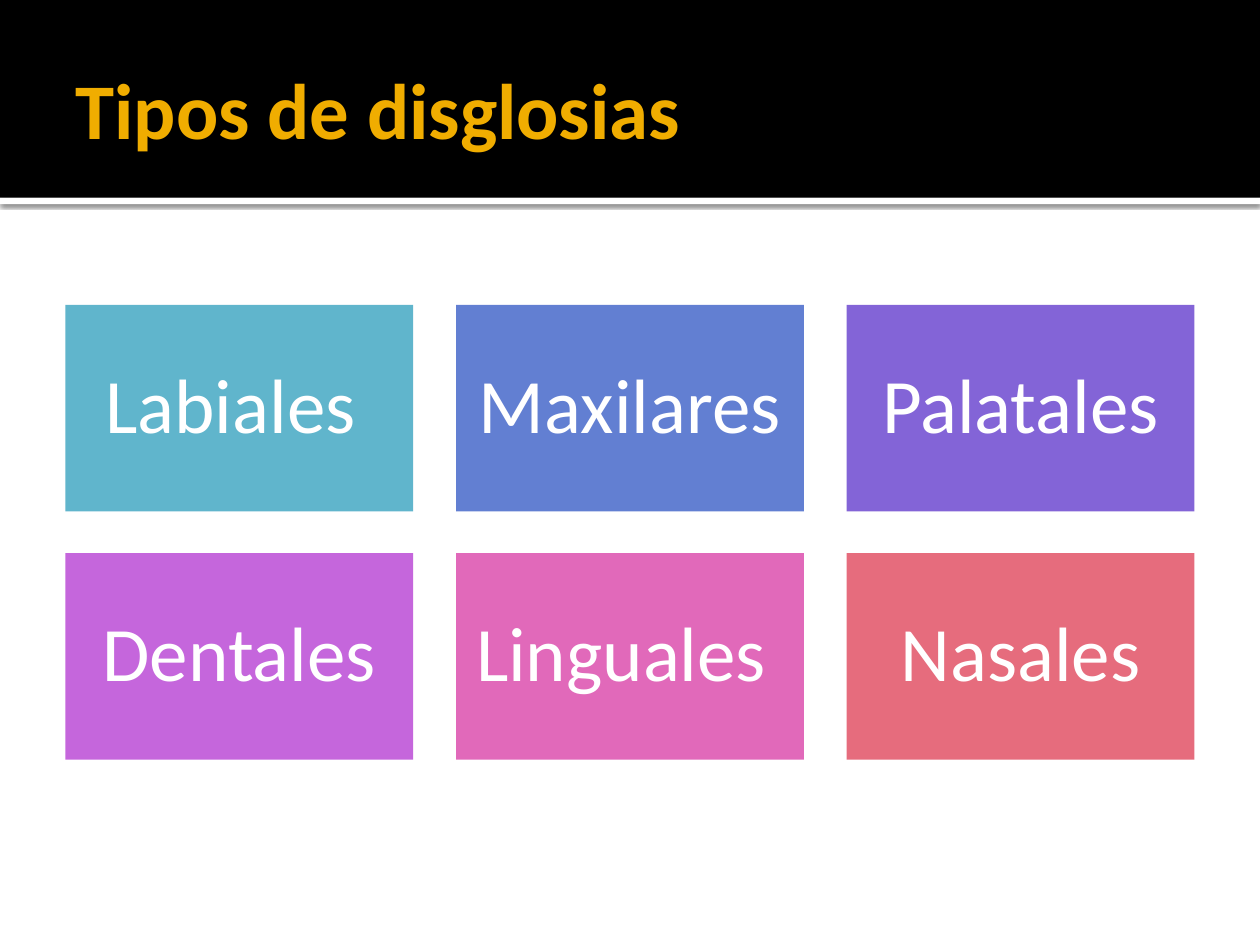
from lxml.etree import SubElement
from pptx import Presentation
from pptx.dml.color import RGBColor
from pptx.enum.shapes import MSO_SHAPE as Shape
from pptx.enum.text import MSO_ANCHOR as Anchor, PP_ALIGN as Align
from pptx.oxml.ns import qn
from pptx.util import Inches, Pt

COLORS = {
    "white": "FFFFFF", "black": "000000", "amber": "F0AD00",
    "teal": "60B5CC", "blue": "627FD2", "violet": "8364D7",
    "purple": "C566DC", "pink": "E169BA", "coral": "E66C7D",
}
TYPES = [
    ("Labiales ", "teal"), ("Maxilares", "blue"), ("Palatales", "violet"),
    ("Dentales", "purple"), ("Linguales ", "pink"), ("Nasales", "coral"),
]
COLUMNS = 3
CARD_WIDTH, CARD_HEIGHT = 2.76, 1.64
LEFT, TOP, STEP_X, STEP_Y = 0.52, 2.42, 3.1, 1.97


def rgb(name):
    return RGBColor.from_string(COLORS[name])


def add_block(slide, left, top, width, height, color):
    block = slide.shapes.add_shape(
        Shape.RECTANGLE, Inches(left), Inches(top), Inches(width), Inches(height))
    block.shadow.inherit = False
    block.fill.solid()
    block.fill.fore_color.rgb = rgb(color)
    block.line.fill.background()
    return block


def add_drop_shadow(block):
    """Cast a soft black shadow straight down from the block."""
    effects = block.element.spPr.find(qn("a:effectLst"))
    shadow = SubElement(effects, qn("a:outerShdw"), blurRad=str(Pt(2.5)),
                        dist=str(Pt(0.8)), dir="5400000", algn="tl", rotWithShape="0")
    black = SubElement(shadow, qn("a:srgbClr"), val=COLORS["black"])
    SubElement(black, qn("a:alpha"), val="60000")


def set_text(shape, text, size, color, align, insets, bold=False):
    frame = shape.text_frame
    frame.text = text
    frame.word_wrap = True
    frame.vertical_anchor = Anchor.MIDDLE
    (frame.margin_left, frame.margin_top,
     frame.margin_right, frame.margin_bottom) = map(Inches, insets)
    paragraph = frame.paragraphs[0]
    paragraph.alignment = align
    font = paragraph.runs[0].font
    font.name, font.size, font.bold = "Calibri", Pt(size), bold
    font.color.rgb = rgb(color)
    return paragraph


def add_header(slide, text):
    add_drop_shadow(add_block(slide, 0, 1.57, 10, 0.05, "white"))
    add_block(slide, 0, 0, 10, 1.57, "black")
    title = slide.shapes.title
    title.left, title.top = Inches(0.5), Inches(0.17)
    title.width, title.height = Inches(9), Inches(1.37)
    set_text(title, text, 45, "amber", Align.LEFT, (0.1, 0.05, 0.05, 0.05), bold=True)
    slide.shapes.element.append(title.element)  # in front of the black band


def add_type_cards(slide):
    for index, (name, color) in enumerate(TYPES):
        row, column = divmod(index, COLUMNS)
        card = add_block(slide, LEFT + column * STEP_X, TOP + row * STEP_Y,
                         CARD_WIDTH, CARD_HEIGHT, color)
        label = set_text(card, name, 44, "white", Align.CENTER, (0.15,) * 4)
        label.line_spacing = 0.9


def main():
    deck = Presentation()
    deck.slide_width, deck.slide_height = Inches(10), Inches(7.5)
    slide = deck.slides.add_slide(deck.slide_layouts[5])
    add_header(slide, "Tipos de disglosias")
    add_type_cards(slide)
    deck.save("out.pptx")


if __name__ == "__main__":
    main()
